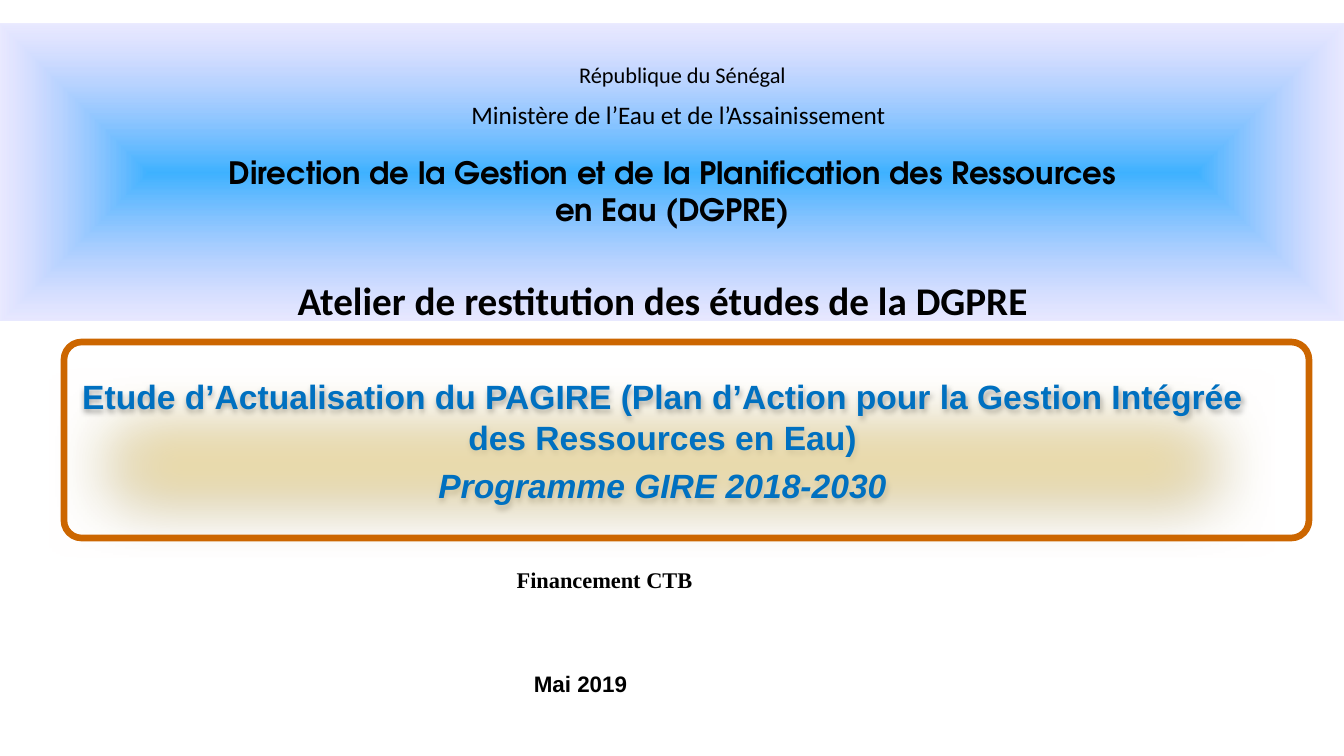
import dataclasses

import lxml.etree
import pptx
import pptx.dml.color
import pptx.enum.shapes
import pptx.enum.text
import pptx.oxml
import pptx.oxml.ns
import pptx.util

PX = 914400 / 100.8
ANCHOR = pptx.enum.text.MSO_ANCHOR
SHAPE = pptx.enum.shapes.MSO_SHAPE


@dataclasses.dataclass(frozen=True)
class Theme:
    ink: str = "000000"
    study: str = "0070C0"
    glow: str = "FFE699"
    frame: str = "CC6600"
    band_centre: str = "0099FF"
    band_edge: str = "9999FF"
    sans: str = "Arial"
    body: str = "Calibri"
    serif: str = "Times New Roman"
    display: str = "TeX Gyre Adventor"
    small: int = 16
    medium: int = 18
    heading: int = 22
    large: int = 24
    event: int = 28


THEME = Theme()


def px(n):
    return pptx.util.Emu(round(n * PX))


def rgb(code):
    return pptx.dml.color.RGBColor.from_string(code)


def place(sp, box):
    sp.left, sp.top, sp.width, sp.height = map(px, box)


def add_xml(sp, xml):
    """Append a DrawingML element to the shape's properties."""
    ns = pptx.oxml.ns.nsdecls("a")
    sp._element.spPr.append(pptx.oxml.parse_xml(xml.replace(">", f" {ns}>", 1)))


def set_frame(tf, anchor=ANCHOR.TOP, wrap=True):
    tf.auto_size = pptx.enum.text.MSO_AUTO_SIZE.NONE
    tf.word_wrap = wrap
    tf.vertical_anchor = anchor


def write(p, text, font, size, color=THEME.ink, bold=True, italic=False, before=0):
    p.text = text
    p.alignment = pptx.enum.text.PP_ALIGN.CENTER
    p.space_before = pptx.util.Pt(before)
    p.font.name = font
    p.font.size = pptx.util.Pt(size)
    p.font.color.rgb = rgb(color)
    p.font.bold = bold
    p.font.italic = italic


def add_band(slide, box):
    """Gradient band placed behind the placeholders."""
    sp = slide.shapes.add_shape(SHAPE.RECTANGLE, *map(px, box))
    sp.shadow.inherit = False
    sp.line.fill.background()
    sp.fill.gradient()
    grad = sp._element.spPr.find(pptx.oxml.ns.qn("a:gradFill"))
    stops = "".join(
        f'<a:gs pos="{pos}"><a:srgbClr val="{color}"><a:alpha val="{alpha}"/></a:srgbClr></a:gs>'
        for pos, color, alpha in (
            (0, THEME.band_centre, 75000), (100000, THEME.band_edge, 21000)))
    new = pptx.oxml.parse_xml(
        f'<a:gradFill {pptx.oxml.ns.nsdecls("a")} rotWithShape="1"><a:gsLst>{stops}</a:gsLst>'
        '<a:path path="shape"><a:fillToRect l="50000" t="50000" r="50000" b="50000"/>'
        '</a:path></a:gradFill>')
    grad.getparent().replace(grad, new)
    slide.shapes._spTree.insert(2, sp._element)


def add_study(sp, box):
    """Study title on a soft-edged glow."""
    place(sp, box)
    sp.fill.solid()
    sp.fill.fore_color.rgb = rgb(THEME.glow)
    add_xml(sp, '<a:effectLst><a:outerShdw blurRad="39370" dist="22860" dir="5400000" '
                'rotWithShape="0"><a:srgbClr val="000000"><a:alpha val="35000"/></a:srgbClr>'
                '</a:outerShdw><a:softEdge rad="635000"/></a:effectLst>')
    tf = sp.text_frame
    set_frame(tf, ANCHOR.MIDDLE)
    tf.margin_bottom = px(50)
    write(tf.paragraphs[0],
          "Etude d’Actualisation du PAGIRE (Plan d’Action pour la Gestion Intégrée "
          "des Ressources en Eau)", THEME.sans, THEME.large, THEME.study, before=6)
    write(tf.add_paragraph(), "Programme GIRE 2018-2030",
          THEME.sans, THEME.large, THEME.study, italic=True, before=6)


def add_frame(slide, box):
    sp = slide.shapes.add_shape(SHAPE.ROUNDED_RECTANGLE, *map(px, box))
    sp.shadow.inherit = False
    sp.adjustments[0] = 0.09
    sp.fill.background()
    sp.line.color.rgb = rgb(THEME.frame)
    sp.line.width = pptx.util.Pt(4.75)


def add_label(slide, box, text, font, size, bold=True, anchor=ANCHOR.TOP):
    tf = slide.shapes.add_textbox(*map(px, box)).text_frame
    set_frame(tf, anchor, wrap=False)
    write(tf.paragraphs[0], text, font, size, bold=bold)


def main():
    prs = pptx.Presentation()
    prs.slide_width, prs.slide_height = px(1344), px(756)
    slide = prs.slides.add_slide(prs.slide_layouts[0])
    title, study = slide.placeholders

    add_band(slide, (0, 24, 1344, 297))
    place(title, (204, 149, 937, 85))
    set_frame(title.text_frame)
    write(title.text_frame.paragraphs[0],
          "Direction de la Gestion et de la Planification des Ressources en Eau (DGPRE)",
          THEME.display, THEME.heading)
    add_study(study, (49, 369, 1227, 189))
    add_frame(slide, (64, 342, 1245, 196))

    add_label(slide, (568, 56, 229, 37), "République du Sénégal",
              THEME.body, THEME.small, bold=False)
    add_label(slide, (459, 94, 439, 40), "Ministère de l’Eau et de l’Assainissement",
              THEME.body, THEME.medium, bold=False)
    add_label(slide, (283, 271, 759, 57), "Atelier de restitution des études de la DGPRE",
              THEME.body, THEME.event)
    add_label(slide, (487, 558, 235, 40), "Financement CTB",
              THEME.serif, THEME.small, anchor=ANCHOR.BOTTOM)
    add_label(slide, (523, 665, 115, 37), "Mai 2019", THEME.sans, THEME.small)
    prs.save("out.pptx")


if __name__ == "__main__":
    main()
